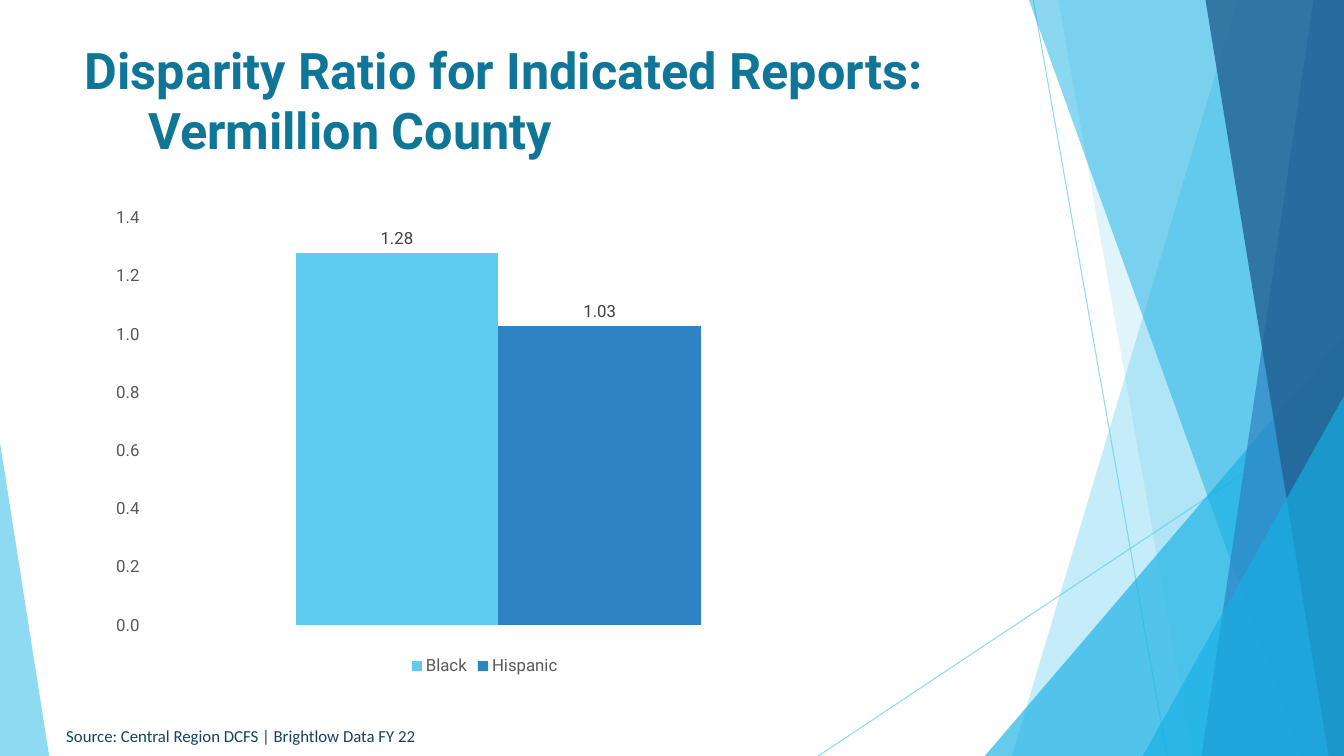
from lxml import etree
from pptx import Presentation
from pptx.chart import data
from pptx.dml.color import RGBColor
from pptx.enum import chart as charts, shapes, text
from pptx.oxml import ns
from pptx.util import Cm, Pt

WIDTH, HEIGHT = 33.87, 19.05  # centimetres

SKY = RGBColor(0x5F, 0xCB, 0xEF)
CYAN = RGBColor(0x17, 0xB0, 0xE4)
BLUE = RGBColor(0x2E, 0x83, 0xC3)
NAVY = RGBColor(0x22, 0x62, 0x92)
TITLE_TEAL = RGBColor(0x0F, 0x76, 0x98)
SOURCE_NAVY = RGBColor(0x17, 0x41, 0x62)
AXIS_GREY = RGBColor(0x59, 0x59, 0x59)
LABEL_GREY = RGBColor(0x40, 0x40, 0x40)


def set_font(font, name, size, color, bold=False):
    font.name, font.size, font.bold = name, Pt(size), bold
    font.color.rgb = color


def set_opacity(shape, percent):
    """Make the shape's only solid colour partly transparent."""
    color = next(shape._element.spPr.iter(ns.qn("a:srgbClr")))
    etree.SubElement(color, ns.qn("a:alpha"), val=str(percent * 1000))


def paint(shape, color, opacity):
    shape.shadow.inherit = False
    shape.fill.solid()
    shape.fill.fore_color.rgb = color
    shape.line.fill.background()
    set_opacity(shape, opacity)


def add_ray(page, start, end):
    ray = page.shapes.add_connector(
        shapes.MSO_CONNECTOR.STRAIGHT, *(Cm(value) for value in start + end))
    ray.line.color.rgb = SKY
    ray.line.width = Pt(0.75)
    set_opacity(ray, 70)
    etree.SubElement(ray._element.spPr, ns.qn("a:effectLst"))


def add_facet(page, top_left, bottom_left, color, opacity):
    """Add a full-height panel that reaches the right edge of the page."""
    builder = page.shapes.build_freeform(Cm(top_left), 0)
    corners = [(WIDTH, 0), (WIDTH, HEIGHT), (bottom_left, HEIGHT)]
    builder.add_line_segments([(Cm(x), Cm(y)) for x, y in corners])
    paint(builder.convert_to_shape(), color, opacity)


def add_corner(page, left, top, width, apex, color, opacity):
    """Add a right triangle that stands on the bottom edge of the page."""
    corner = page.shapes.add_shape(
        shapes.MSO_SHAPE.ISOSCELES_TRIANGLE,
        Cm(left), Cm(top), Cm(width), Cm(HEIGHT - top))
    corner.adjustments[0] = apex
    paint(corner, color, opacity)


def add_backdrop(page):
    add_ray(page, (26.04, 0), (29.41, HEIGHT))
    add_ray(page, (WIDTH, 10.24), (20.62, HEIGHT))
    add_facet(page, 31.19, 25.5, SKY, 36)
    add_facet(page, 26.67, 30.05, SKY, 20)
    add_corner(page, 24.82, 8.46, WIDTH - 24.82, 1, CYAN, 66)
    add_facet(page, 25.93, 32.79, CYAN, 50)
    add_facet(page, 33.1, 30.28, BLUE, 70)
    add_facet(page, 30.38, 33.48, NAVY, 80)
    add_corner(page, 28.8, 9.98, WIDTH - 28.8, 1, CYAN, 66)
    add_corner(page, 0, 11.15, 1.24, 0, SKY, 70)


def set_title(page, wording):
    title = page.shapes.title
    title.left, title.top = Cm(1.88), Cm(0.94)
    title.width, title.height = Cm(23.88), Cm(3.12)
    frame = title.text_frame
    frame.auto_size = text.MSO_AUTO_SIZE.NONE
    frame.vertical_anchor = text.MSO_ANCHOR.MIDDLE
    para = frame.paragraphs[0]
    para.text = wording
    para.alignment = text.PP_ALIGN.LEFT
    hanging = Cm(1.6)
    properties = para._p.get_or_add_pPr()
    properties.set("marL", str(hanging))
    properties.set("indent", str(-hanging))
    for span in para.runs:
        set_font(span.font, "Roboto", 36, TITLE_TEAL, bold=True)


def add_source(page, wording):
    box = page.shapes.add_textbox(Cm(1.42), Cm(18.16), Cm(9.55), Cm(0.76))
    box.text_frame.word_wrap = True
    para = box.text_frame.paragraphs[0]
    para.text = wording
    set_font(para.runs[0].font, "Calibri", 12, SOURCE_NAVY)


def add_ratio_chart(page, ratios):
    """Add a column chart with one series for each (name, ratio, colour)."""
    table = data.CategoryChartData()
    table.categories = ["1"]
    for name, ratio, _ in ratios:
        table.add_series(name, [ratio])
    chart = page.shapes.add_chart(
        charts.XL_CHART_TYPE.COLUMN_CLUSTERED,
        Cm(2.54), Cm(5), Cm(19.35), Cm(12.14), table).chart
    set_font(chart.font, "Roboto", 12, AXIS_GREY)
    chart.has_title = False
    chart.has_legend = True
    chart.legend.position = charts.XL_LEGEND_POSITION.BOTTOM
    chart.legend.include_in_layout = False
    set_font(chart.legend.font, "Roboto", 12, AXIS_GREY)

    chart.category_axis.visible = False
    axis = chart.value_axis
    axis.minimum_scale, axis.maximum_scale, axis.major_unit = 0, 1.4, 0.2
    axis.has_major_gridlines = False
    axis.major_tick_mark = charts.XL_TICK_MARK.NONE
    axis.format.line.fill.background()
    axis.tick_labels.number_format = "0.0"
    axis.tick_labels.number_format_is_linked = False
    set_font(axis.tick_labels.font, "Roboto", 12, AXIS_GREY)

    plot = chart.plots[0]
    plot.gap_width, plot.overlap = 150, 0
    plot.vary_by_categories = False
    for series, (_, _, color) in zip(plot.series, ratios):
        series.format.fill.solid()
        series.format.fill.fore_color.rgb = color
        labels = series.data_labels
        labels.show_value = True
        labels.position = charts.XL_LABEL_POSITION.OUTSIDE_END
        labels.number_format = "#,##0.00"
        labels.number_format_is_linked = False
        set_font(labels.font, "Roboto", 12, LABEL_GREY)


def main():
    deck = Presentation()
    deck.slide_width, deck.slide_height = Cm(WIDTH), Cm(HEIGHT)
    page = deck.slides.add_slide(deck.slide_layouts.get_by_name("Title Only"))
    add_backdrop(page)
    set_title(page, "Disparity Ratio for Indicated Reports:\vVermillion County")
    add_source(page, "Source: Central Region DCFS | Brightlow Data FY 22")
    add_ratio_chart(page, [("Black", 1.28, SKY), ("Hispanic", 1.03, BLUE)])
    deck.save("out.pptx")


if __name__ == "__main__":
    main()
